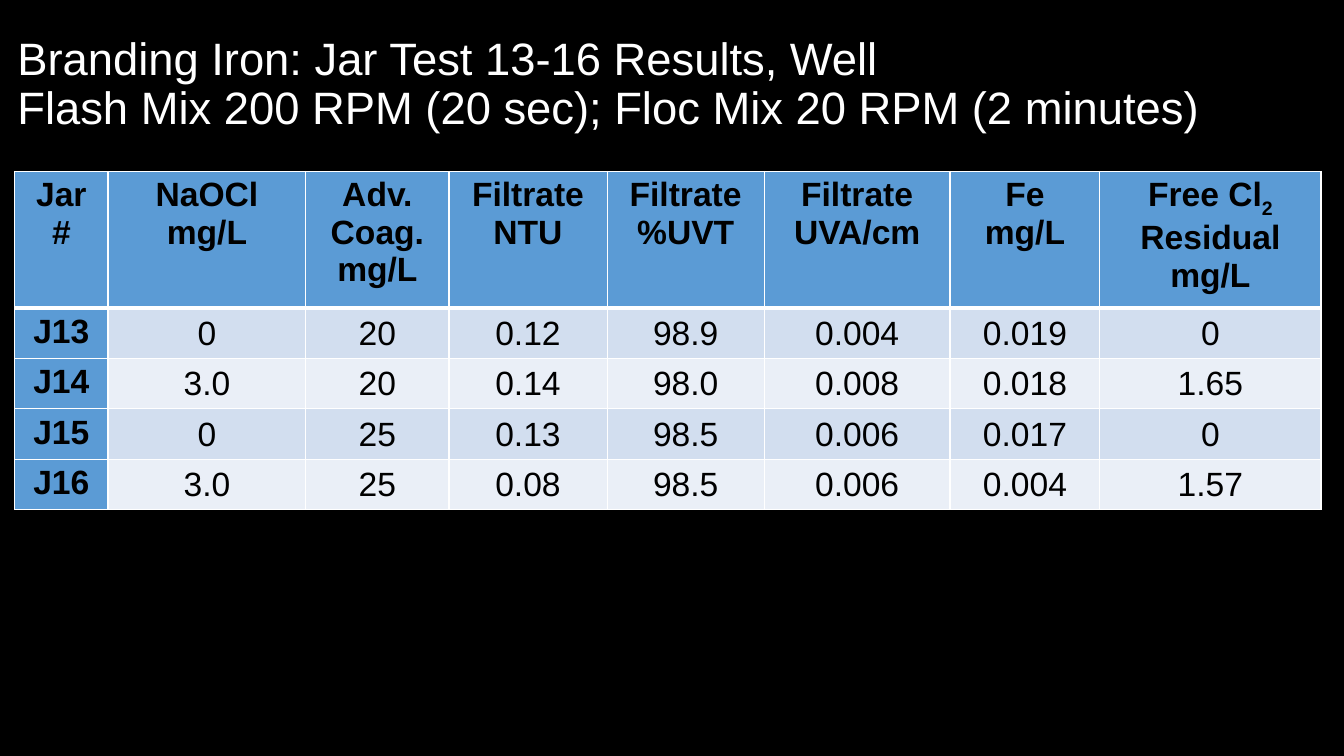
import pptx
import pptx.dml.color
import pptx.enum.text
import pptx.oxml.ns
import pptx.util
import lxml.etree

Pt = pptx.util.Pt
ALIGN = pptx.enum.text.PP_ALIGN
ANCHOR = pptx.enum.text.MSO_ANCHOR
FONT = "Arial"
HUES = {"back": "000000", "text": "FFFFFF", "ink": "000000", "rule": "FFFFFF",
        "head": "5B9BD5", "odd": "D2DEEF", "even": "EAEFF7"}
TITLE = ["Branding Iron: Jar Test 13-16 Results, Well",
         "Flash Mix 200 RPM (20 sec); Floc Mix 20 RPM (2 minutes)"]
HEADS = [["Jar", "#"], ["NaOCl", "mg/L"], ["Adv.", "Coag.", "mg/L"],
         ["Filtrate", "NTU"], ["Filtrate", "%UVT"], ["Filtrate", "UVA/cm"],
         ["Fe", "mg/L"], ["Free Cl_2", "Residual", "mg/L"]]
JARS = [["J13", "0", "20", "0.12", "98.9", "0.004", "0.019", "0"],
        ["J14", "3.0", "20", "0.14", "98.0", "0.008", "0.018", "1.65"],
        ["J15", "0", "25", "0.13", "98.5", "0.006", "0.017", "0"],
        ["J16", "3.0", "25", "0.08", "98.5", "0.006", "0.004", "1.57"]]
WIDTHS = [66.7, 141.3, 102.2, 113, 112.3, 132.7, 107, 158]


def tint(fill, name):
    """Fill with a named colour."""
    fill.solid()
    fill.fore_color.rgb = pptx.dml.color.RGBColor.from_string(HUES[name])


def write(para, text, size, hue, bold=False):
    """Add one run and return it."""
    run = para.add_run()
    run.text = text
    run.font.name = FONT
    run.font.size = Pt(size)
    run.font.bold = bold
    tint(run.font.fill, hue)
    return run


def edge(cell, sides):
    """Draw the cell borders, given as side and width."""
    props = cell._tc.get_or_add_tcPr()
    for side, width in sides.items():
        line = lxml.etree.SubElement(props, pptx.oxml.ns.qn("a:ln" + side), w=str(Pt(width)))
        fill = lxml.etree.SubElement(line, pptx.oxml.ns.qn("a:solidFill"))
        lxml.etree.SubElement(fill, pptx.oxml.ns.qn("a:srgbClr"), val=HUES["rule"])


def title(slide, left, top, width, height):
    """Place the two-line title in its box."""
    frame = slide.shapes.add_textbox(Pt(left), Pt(top), Pt(width), Pt(height)).text_frame
    frame.word_wrap = True
    frame.vertical_anchor = ANCHOR.MIDDLE
    para = frame.paragraphs[0]
    para.line_spacing = 0.9
    for num, text in enumerate(TITLE):
        if num:
            para.add_line_break()
        write(para, text, 32.4, "text")


def label(cell, lines, bold):
    """Write centred lines, with a subscript after an underscore."""
    frame = cell.text_frame
    for num, text in enumerate(lines):
        para = frame.add_paragraph() if num else frame.paragraphs[0]
        para.alignment = ALIGN.CENTER
        base, _, sub = text.partition("_")
        write(para, base, 24, "ink", bold)
        if sub:
            run = write(para, sub, 24, "ink", bold)
            run.font._element.set("baseline", "-25000")


def results(slide, left, top, width, height):
    """Place the table of jar results in its box."""
    rows = [HEADS] + [[[text] for text in jar] for jar in JARS]
    table = slide.shapes.add_table(len(rows), len(WIDTHS), Pt(left), Pt(top),
                                   Pt(width), Pt(height)).table
    for col, size in zip(table.columns, WIDTHS):
        col.width = Pt(size * width / sum(WIDTHS))
    for r, row in enumerate(rows):
        table.rows[r].height = Pt(31.7 if r else height - 31.7 * len(JARS))
        for c, lines in enumerate(row):
            cell = table.cell(r, c)
            strong = r == 0 or c == 0
            edge(cell, {"L": 1, "R": 1, "T": 3 if r == 1 else 1, "B": 1 if r else 3})
            cell.fill.solid()
            tint(cell.fill, "head" if strong else "odd" if r % 2 else "even")
            if not strong:
                cell.vertical_anchor = ANCHOR.MIDDLE
                cell.margin_left = cell.margin_right = cell.margin_top = Pt(0.7)
                cell.margin_bottom = Pt(0)
            label(cell, lines, strong)


def main():
    """Build the slide and save it."""
    deck = pptx.Presentation()
    deck.slide_width, deck.slide_height = Pt(960), Pt(540)
    slide = deck.slides.add_slide(deck.slide_layouts[6])
    tint(slide.background.fill, "back")
    title(slide, 5.3, 8.6, 938, 104.4)
    results(slide, 10.5, 122.4, 933.2, 201.6)
    deck.save("out.pptx")


if __name__ == "__main__":
    main()
